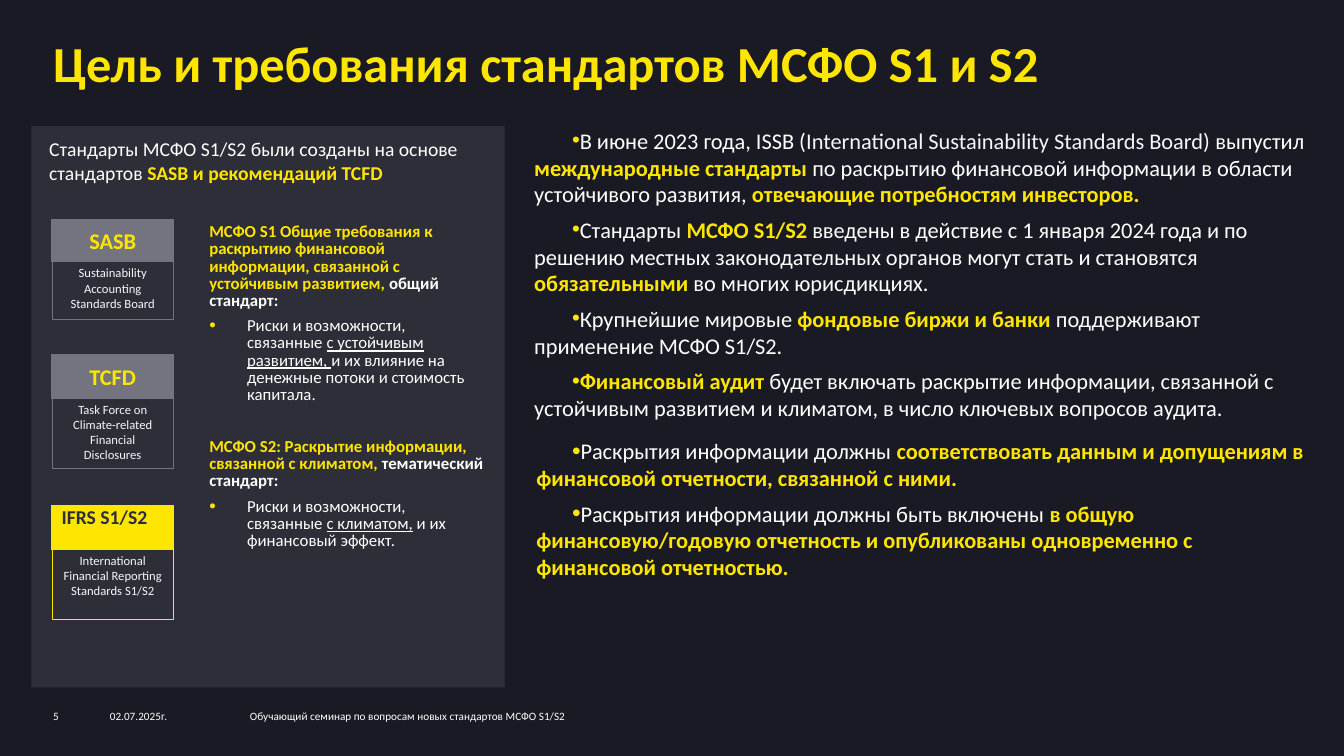
from lxml.etree import SubElement
from pptx import Presentation
from pptx.dml.color import RGBColor
from pptx.enum.shapes import MSO_SHAPE
from pptx.enum.text import MSO_ANCHOR, PP_ALIGN
from pptx.oxml.ns import qn
from pptx.util import Pt

BACKGROUND = RGBColor(0x1A, 0x1A, 0x24)
PANEL = RGBColor(0x2E, 0x2E, 0x38)
GREY = RGBColor(0x74, 0x74, 0x80)
PALE = RGBColor(0xF6, 0xF6, 0xFA)
YELLOW = RGBColor(0xFF, 0xE6, 0x00)
WHITE = RGBColor(0xFF, 0xFF, 0xFF)

PLAIN = {"color": WHITE}
STRONG = {"color": YELLOW, "bold": True}
WHITE_BOLD = {"color": WHITE, "bold": True}
UNDERLINED = {"color": WHITE, "underline": True}
LIGHT = {"color": PALE}
DARK_BOLD = {"color": PANEL, "bold": True}

DEFAULT_INSETS = (7.2, 3.6, 7.2, 3.6)
NO_INSETS = (0, 0, 0, 0)

FOOTER = [
    (38, 40, "5"),
    (78.5, 100, "02.07.2025г."),
    (178.5, 301, "Обучающий семинар по вопросам новых стандартов МСФО S1/S2"),
]

CARDS = [
    (157, 30, 42, "SASB", "Sustainability Accounting Standards Board"),
    (253.5, 31, 51, "TCFD", "Task Force on Climate-related Financial Disclosures"),
]

STANDARDS = [
    (157, 132,
     [("МСФО S1 Общие требования к раскрытию финансовой информации, "
       "связанной с устойчивым развитием, ", STRONG),
      ("общий стандарт:", WHITE_BOLD)],
     [("Риски и возможности, связанные ", PLAIN),
      ("с устойчивым развитием, ", UNDERLINED),
      ("и их влияние на денежные потоки и стоимость капитала.", PLAIN)]),
    (310.5, 118,
     [("МСФО S2: Раскрытие информации, связанной с климатом, ", STRONG),
      ("тематический стандарт:", WHITE_BOLD)],
     [("Риски и возможности, связанные ", PLAIN),
      ("с климатом,", UNDERLINED),
      (" и их финансовый эффект.", PLAIN)]),
]

FACTS = [
    [("В июне 2023 года, ISSB (", PLAIN),
     ("International Sustainability Standards Board) ", LIGHT),
     ("выпустил ", PLAIN),
     ("международные стандарты ", STRONG),
     ("по раскрытию финансовой информации в области устойчивого развития, ", PLAIN),
     ("отвечающие потребностям инвесторов.", STRONG)],
    [("Стандарты ", PLAIN),
     ("МСФО S1/S2 ", STRONG),
     ("введены в действие с 1 января 2024 года и по решению местных "
      "законодательных органов могут стать и становятся ", PLAIN),
     ("обязательными", STRONG),
     (" во многих юрисдикциях.", PLAIN)],
    [("Крупнейшие мировые ", PLAIN),
     ("фондовые биржи и банки ", STRONG),
     ("поддерживают применение МСФО S1/S2.", PLAIN)],
    [("Финансовый аудит ", STRONG),
     ("будет включать раскрытие информации, связанной с устойчивым развитием "
      "и климатом, в число ключевых вопросов аудита.", PLAIN)],
]

DISCLOSURES = [
    [("Раскрытия информации должны ", PLAIN),
     ("соответствовать данным и допущениям в финансовой отчетности, "
      "связанной с ними.", STRONG)],
    [("Раскрытия информации должны быть включены ", PLAIN),
     ("в общую финансовую/годовую отчетность и опубликованы одновременно "
      "с финансовой отчетностью.", STRONG)],
]


def set_attributes(target, values):
    for name, value in values.items():
        setattr(target, name, value)


def set_frame(tf, insets, anchor=MSO_ANCHOR.TOP):
    sides = ("margin_left", "margin_top", "margin_right", "margin_bottom")
    set_attributes(tf, dict(zip(sides, map(Pt, insets))))
    set_attributes(tf, {"word_wrap": True, "vertical_anchor": anchor})


def add_bullet(p, margin, indent, percent):
    pPr = p._p.get_or_add_pPr()
    pPr.set("marL", str(Pt(margin)))
    pPr.set("indent", str(Pt(indent)))
    color = SubElement(pPr, qn("a:buClr"))
    SubElement(color, qn("a:srgbClr"), val=str(YELLOW))
    SubElement(pPr, qn("a:buSzPct"), val=str(percent * 1000))
    SubElement(pPr, qn("a:buFont"), typeface="Arial")
    SubElement(pPr, qn("a:buChar"), char="•")


def write_paragraph(tf, runs, size, bullet=None, **layout):
    p = tf.add_paragraph() if tf.paragraphs[0].runs else tf.paragraphs[0]
    if bullet:
        add_bullet(p, *bullet)
    set_attributes(p, layout)
    for text, style in runs:
        r = p.add_run()
        r.text = text
        values = {"name": "Calibri", "size": Pt(size), "bold": False, **style}
        r.font.color.rgb = values.pop("color")
        set_attributes(r.font, values)


def add_text_box(slide, box, insets=DEFAULT_INSETS):
    tf = slide.shapes.add_textbox(*map(Pt, box)).text_frame
    set_frame(tf, insets)
    return tf


def add_rectangle(slide, box, fill=None, line=None, weight=0.75):
    sp = slide.shapes.add_shape(MSO_SHAPE.RECTANGLE, *map(Pt, box))
    sp.shadow.inherit = False
    if fill is None:
        sp.fill.background()
    else:
        sp.fill.solid()
        sp.fill.fore_color.rgb = fill
    if line is None:
        sp.line.fill.background()
    else:
        sp.line.color.rgb = line
        sp.line.width = Pt(weight)
    return sp.text_frame


def add_card(slide, top, head, body, name, meaning, color=GREY, size=16,
             style=STRONG, insets=NO_INSETS, anchor=MSO_ANCHOR.MIDDLE,
             align=PP_ALIGN.CENTER):
    tf = add_rectangle(slide, (37, top + head - 1, 87, body), line=color, weight=0.25)
    set_frame(tf, DEFAULT_INSETS)
    write_paragraph(tf, [(meaning, LIGHT)], 9, alignment=PP_ALIGN.CENTER)
    tf = add_rectangle(slide, (37, top, 87, head), color, color)
    set_frame(tf, insets, anchor)
    write_paragraph(tf, [(name, style)], size, alignment=align)


def add_title(slide, text):
    sp = slide.shapes.title
    box = {"left": 38, "top": 29.5, "width": 864, "height": 47}
    set_attributes(sp, {side: Pt(length) for side, length in box.items()})
    set_frame(sp.text_frame, NO_INSETS)
    write_paragraph(sp.text_frame, [(text, STRONG)], 36,
                    alignment=PP_ALIGN.LEFT, line_spacing=0.85)


def main():
    prs = Presentation()
    set_attributes(prs, {"slide_width": Pt(960), "slide_height": Pt(540)})
    slide = prs.slides.add_slide(prs.slide_layouts[5])
    slide.background.fill.solid()
    slide.background.fill.fore_color.rgb = BACKGROUND

    add_rectangle(slide, (22.5, 90, 338, 401), PANEL)
    add_title(slide, "Цель и требования стандартов МСФО S1 и S2")

    tf = add_text_box(slide, (28, 94.5, 338, 41))
    write_paragraph(tf, [("Стандарты МСФО S1/S2 были созданы на основе стандартов ", PLAIN),
                         ("SASB и рекомендаций TCFD", STRONG)], 14)

    for card in CARDS:
        add_card(slide, *card)
    add_card(slide, 361, 31.5, 51, "IFRS S1/S2",
             "International Financial Reporting Standards S1/S2",
             color=YELLOW, size=14, style=DARK_BOLD, insets=(7, 0, 0, 0),
             anchor=MSO_ANCHOR.TOP, align=PP_ALIGN.LEFT)

    for top, height, heading, scope in STANDARDS:
        tf = add_text_box(slide, (149.5, top, 196.5, height), (0, 3, 0, 0))
        spacing = {"line_spacing": 0.85, "space_after": Pt(6)}
        write_paragraph(tf, heading, 12, **spacing)
        write_paragraph(tf, scope, 12, (27, -27, 110), **spacing)

    tf = add_text_box(slide, (374.5, 87, 564.5, 373))
    for runs in FACTS:
        write_paragraph(tf, runs, 16, (0, 27, 100), space_after=Pt(6))
    for runs in DISCLOSURES:
        write_paragraph(tf, runs, 16, (1.5, 25.5, 110), space_before=Pt(6))

    for left, width, text in FOOTER:
        tf = add_text_box(slide, (left, 507, width, 9.5), NO_INSETS)
        write_paragraph(tf, [(text, PLAIN)], 8)

    prs.save("out.pptx")


if __name__ == "__main__":
    main()
